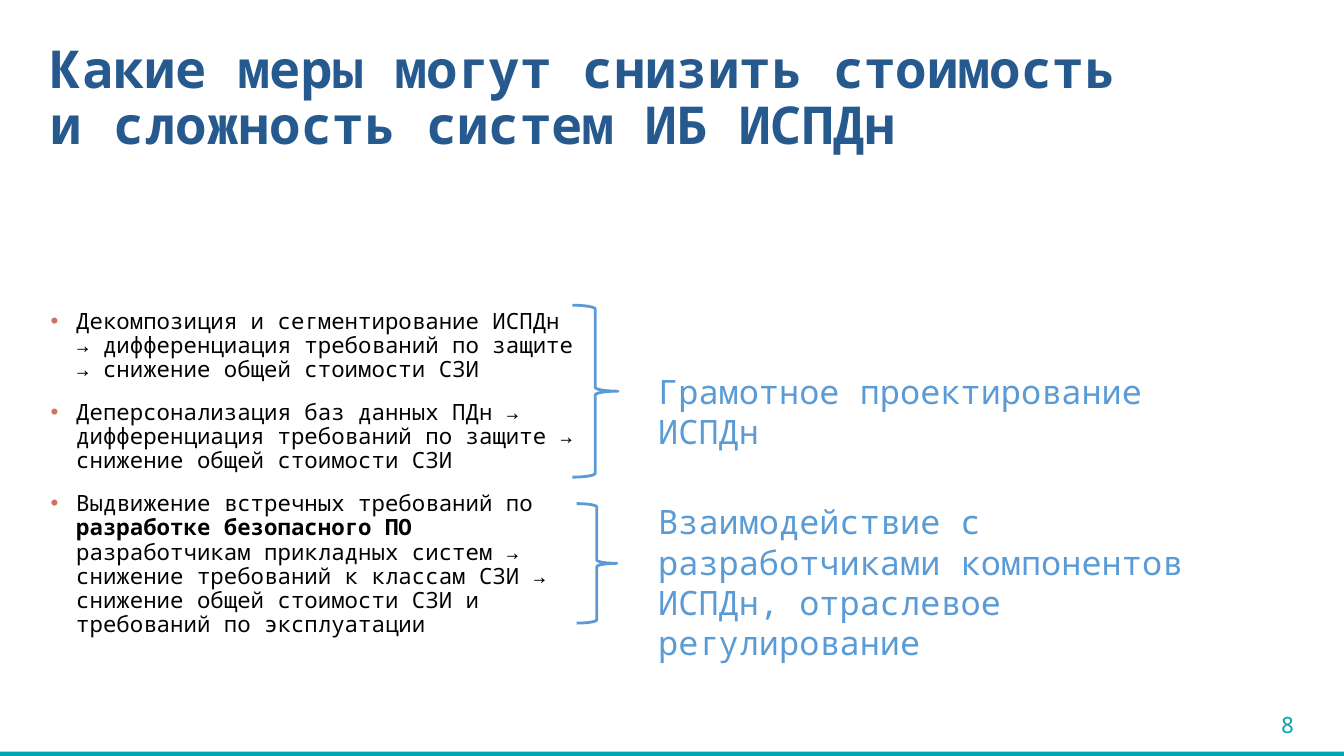
from dataclasses import dataclass
from typing import NamedTuple

from lxml.etree import SubElement
from pptx import Presentation
from pptx.dml.color import RGBColor as Rgb
from pptx.enum.shapes import MSO_SHAPE as Kind
from pptx.enum.text import MSO_ANCHOR as Anchor, PP_ALIGN as Align
from pptx.oxml.ns import qn
from pptx.util import Cm, Pt


@dataclass(frozen=True)
class Theme:
    face: str = "Noto Sans Mono"
    navy: str = "265A8F"
    teal: str = "00A7B5"
    blue: str = "5B9BD5"
    coral: str = "D2715F"
    black: str = "000000"
    head: int = 28
    note: int = 18
    small: int = 12
    line: float = 1.5


class Box(NamedTuple):
    left: float
    top: float
    width: float
    height: float

    def cm(self) -> list:
        return [Cm(v) for v in self]


class Run(NamedTuple):
    text: str
    bold: bool = False


class Group(NamedTuple):
    """A brace and the conclusion beside it."""
    brace: Box
    label: Box
    text: str


THEME = Theme()
WIDTH, HEIGHT = 25.4, 14.29
EDGE, NOTE = 0.71, 12.19
INDENT = 0.48

TITLE = "Какие меры могут снизить стоимость и сложность систем ИБ ИСПДн"
POINTS = [
    [Run("Декомпозиция и сегментирование ИСПДн → дифференциация требований "
         "по защите → снижение общей стоимости СЗИ")],
    [Run("Деперсонализация баз данных ПДн → дифференциация требований "
         "по защите → снижение общей стоимости СЗИ")],
    [Run("Выдвижение встречных требований по "),
     Run("разработке безопасного ПО", True),
     Run(" разработчикам прикладных систем → снижение требований к классам "
         "СЗИ → снижение общей стоимости СЗИ и требований по эксплуатации")],
]
GROUPS = [
    Group(Box(10.82, 5.77, 0.86, 3.25), Box(NOTE, 6.88, 11.38, 1.02),
          "Грамотное проектирование ИСПДн"),
    Group(Box(10.9, 9.52, 0.76, 2.26), Box(NOTE, 9.35, 11.38, 2.57),
          "Взаимодействие с разработчиками компонентов ИСПДн, "
          "отраслевое регулирование"),
]


def apply(target, values: dict) -> None:
    for name, value in values.items():
        setattr(target, name, value)


def add_bullet(para) -> None:
    props = para._p.get_or_add_pPr()
    props.set("marL", str(Cm(INDENT)))
    props.set("indent", str(-Cm(INDENT)))
    tint = SubElement(props, qn("a:buClr"))
    SubElement(tint, qn("a:srgbClr"), val=THEME.coral)
    SubElement(props, qn("a:buFont"), typeface="Arial")
    SubElement(props, qn("a:buChar"), char="•")


def add_text(slide, box: Box, paras: list[list[Run]], size: int, color: str,
             form: dict | None = None, anchor: Anchor = Anchor.TOP,
             bullet: bool = False) -> None:
    frame = slide.shapes.add_textbox(*box.cm()).text_frame
    apply(frame, {"word_wrap": True, "vertical_anchor": anchor})
    for i, runs in enumerate(paras):
        para = frame.add_paragraph() if i else frame.paragraphs[0]
        apply(para, form or {})
        if i:
            para.space_before = Pt(10)
        if bullet:
            add_bullet(para)
        for text, bold in runs:
            run = para.add_run()
            run.text = text
            apply(run.font, {"name": THEME.face, "size": Pt(size), "bold": bold})
            run.font.color.rgb = Rgb.from_string(color)


def add_bar(slide, box: Box) -> None:
    bar = slide.shapes.add_shape(Kind.RECTANGLE, *box.cm())
    bar.shadow.inherit = False
    bar.fill.solid()
    bar.fill.fore_color.rgb = Rgb.from_string(THEME.teal)
    bar.line.fill.background()


def add_brace(slide, box: Box) -> None:
    brace = slide.shapes.add_shape(Kind.RIGHT_BRACE, *box.cm())
    brace.shadow.inherit = False
    brace.fill.background()
    brace.line.color.rgb = Rgb.from_string(THEME.blue)
    brace.line.width = Pt(THEME.line)


def main() -> None:
    deck = Presentation()
    apply(deck, {"slide_width": Cm(WIDTH), "slide_height": Cm(HEIGHT)})
    slide = deck.slides.add_slide(deck.slide_layouts[6])

    add_bar(slide, Box(0, 14.21, WIDTH, 0.15))
    add_text(slide, Box(22.35, 13.31, 2.36, 0.76), [[Run("8")]],
             THEME.small, THEME.teal, {"alignment": Align.RIGHT})
    add_text(slide, Box(EDGE, 0.69, 20.85, 2.69), [[Run(TITLE, True)]],
             THEME.head, THEME.navy, {"line_spacing": 0.9})
    add_text(slide, Box(EDGE, 3.89, 10.49, 10.13), POINTS, THEME.small,
             THEME.black, {"line_spacing": 0.9}, Anchor.MIDDLE, bullet=True)
    for brace, label, text in GROUPS:
        add_brace(slide, brace)
        add_text(slide, label, [[Run(text)]], THEME.note, THEME.blue)

    deck.save("out.pptx")


if __name__ == "__main__":
    main()
